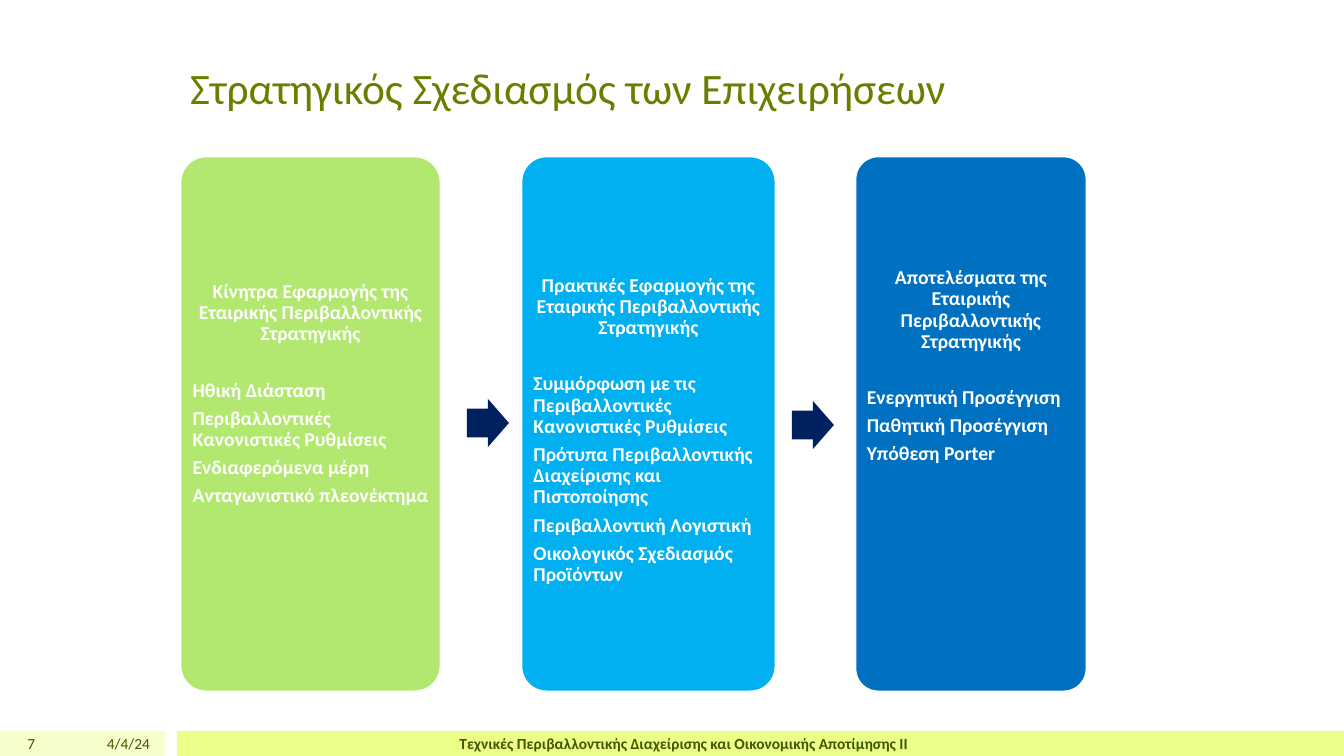
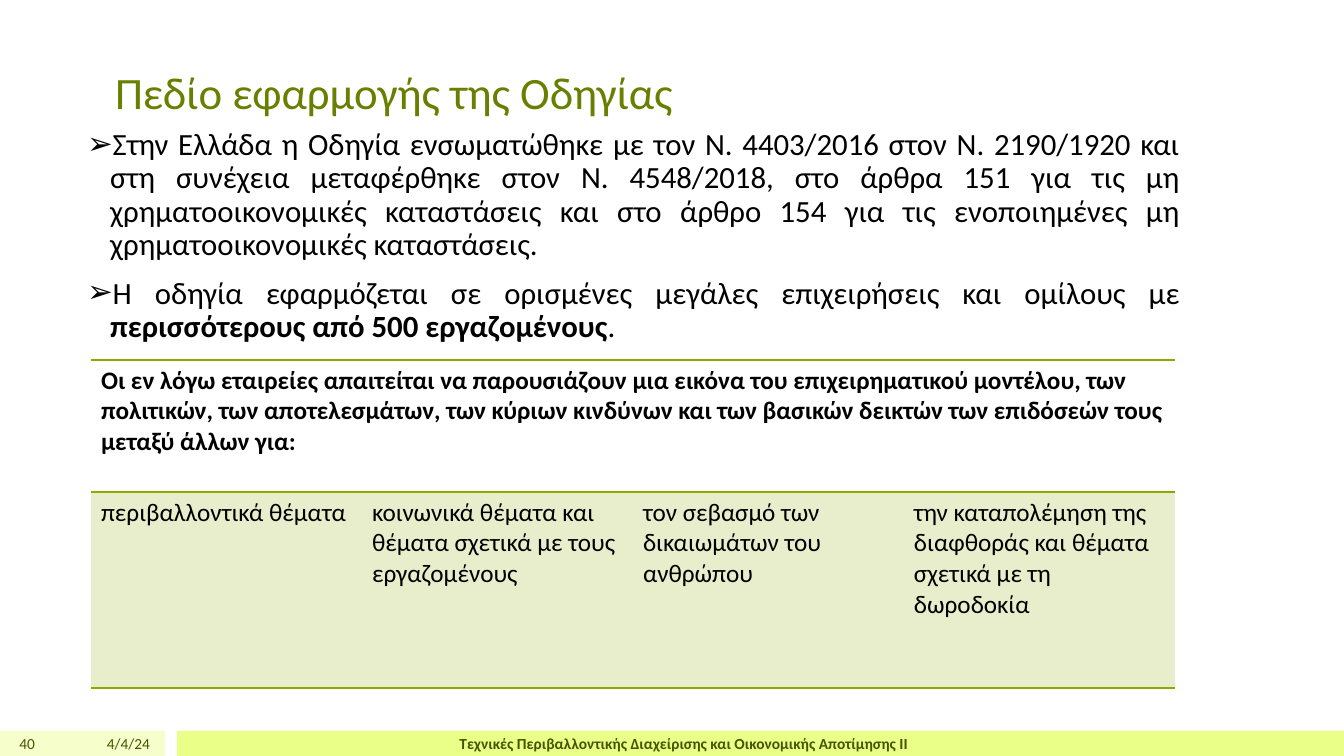
from pptx import Presentation
from pptx.dml.color import RGBColor
from pptx.enum.shapes import MSO_SHAPE
from pptx.enum.text import MSO_ANCHOR, MSO_AUTO_SIZE, PP_ALIGN
from pptx.oxml.ns import qn
from pptx.util import Emu, Pt
from lxml import etree

SLIDE_WIDTH, SLIDE_HEIGHT = 1344, 756
EMU_PER_PX = 12192000 / SLIDE_WIDTH

FONT = "Calibri"
BLACK = RGBColor(0x00, 0x00, 0x00)
WHITE = RGBColor(0xFF, 0xFF, 0xFF)
OLIVE = RGBColor(0x68, 0x80, 0x00)
DARK_OLIVE = RGBColor(0x45, 0x55, 0x00)
PALE_LIME = RGBColor(0xF6, 0xFF, 0xCC)
LIME = RGBColor(0xE9, 0xFF, 0x88)
TABLE_LINE = RGBColor(0x8B, 0xAA, 0x00)
TABLE_FILL = RGBColor(0xE8, 0xEE, 0xCC)
GREEN = RGBColor(0xB3, 0xE8, 0x70)
SKY = RGBColor(0x00, 0xB0, 0xF0)
BLUE = RGBColor(0x00, 0x70, 0xC0)
NAVY = RGBColor(0x00, 0x20, 0x60)

TITLE_ONLY, TITLE_AND_BODY = 5, 1
DATE = "4/4/24"
COURSE = "Τεχνικές Περιβαλλοντικής Διαχείρισης και Οικονομικής Αποτίμησης ΙΙ"
BAND_TOP, BAND_HEIGHT = 731, 25
CARD_TOP, CARD_HEIGHT = 156, 536


def px(length):
    return Emu(round(length * EMU_PER_PX))


def set_values(target, values):
    for name, value in values.items():
        setattr(target, name, value)


class SlideBuilder:
    """Holds the deck, its style and the slide being filled."""

    def __init__(self):
        self.deck = Presentation()
        self.deck.slide_width = px(SLIDE_WIDTH)
        self.deck.slide_height = px(SLIDE_HEIGHT)
        self.page = None

    def new_slide(self, layout, number):
        self.page = self.deck.slides.add_slide(self.deck.slide_layouts[layout])
        self.shape(MSO_SHAPE.RECTANGLE, (0, BAND_TOP, 165, BAND_HEIGHT), PALE_LIME)
        self.shape(MSO_SHAPE.RECTANGLE, (177, BAND_TOP, 1167, BAND_HEIGHT), LIME)
        self.footer(number, 0, 45, PP_ALIGN.RIGHT)
        self.footer(DATE, 50, 110, PP_ALIGN.RIGHT)
        self.footer(COURSE, 180, 1008, PP_ALIGN.CENTER, bold=True)

    def place(self, box, area):
        set_values(box, dict(zip(("left", "top", "width", "height"), map(px, area))))

    def add_text(self, para, text, size, color, bold=False, **layout):
        """Fill a paragraph with a text, or with (text, bold) spans."""
        set_values(para, layout)
        spans = [(text, bold)] if isinstance(text, str) else text
        for content, is_bold in spans:
            span = para.add_run()
            span.text = content
            set_values(span.font, {"name": FONT, "size": Pt(size), "bold": is_bold})
            span.font.color.rgb = color

    def paragraphs(self, frame, count):
        return [frame.paragraphs[0]] + [frame.add_paragraph() for _ in range(count - 1)]

    def footer(self, text, left, width, alignment, bold=False):
        box = self.page.shapes.add_textbox(
            *map(px, (left, BAND_TOP, width, BAND_HEIGHT)))
        set_values(box.text_frame, {
            "word_wrap": True, "vertical_anchor": MSO_ANCHOR.MIDDLE,
            "margin_top": 0, "margin_bottom": 0})
        self.add_text(box.text_frame.paragraphs[0], text, 11, DARK_OLIVE, bold,
                      alignment=alignment)

    def title(self, text, area, size):
        box = self.page.shapes.title
        self.place(box, area)
        set_values(box.text_frame, {
            "word_wrap": True, "auto_size": MSO_AUTO_SIZE.NONE,
            "vertical_anchor": MSO_ANCHOR.BOTTOM})
        self.add_text(box.text_frame.paragraphs[0], text, size, OLIVE,
                      alignment=PP_ALIGN.LEFT, line_spacing=0.9)

    def bullets(self, items, area):
        box = self.page.placeholders[1]
        self.place(box, area)
        frame = box.text_frame
        set_values(frame, {"word_wrap": True, "auto_size": MSO_AUTO_SIZE.NONE})
        for para, item in zip(self.paragraphs(frame, len(items)), items):
            self.add_text(para, item, 22, BLACK, alignment=PP_ALIGN.JUSTIFY,
                          line_spacing=0.9, space_before=Pt(11))
            properties = para._p.get_or_add_pPr()
            properties.set("marL", str(px(23)))
            properties.set("indent", str(-px(23)))
            etree.SubElement(properties, qn("a:buChar")).set("char", "➢")

    def shape(self, kind, area, fill, adjustments=()):
        shape = self.page.shapes.add_shape(kind, *map(px, area))
        shape.shadow.inherit = False
        shape.fill.solid()
        shape.fill.fore_color.rgb = fill
        shape.line.fill.background()
        for index, value in enumerate(adjustments):
            shape.adjustments[index] = value
        return shape

    def card(self, left, width, fill, text_top, heading, items):
        card = self.shape(MSO_SHAPE.ROUNDED_RECTANGLE,
                          (left, CARD_TOP, width, CARD_HEIGHT), fill, [0.1])
        card.line.color.rgb = WHITE
        card.line.width = Pt(2)
        frame = card.text_frame
        set_values(frame, {
            "word_wrap": True, "vertical_anchor": MSO_ANCHOR.TOP,
            "margin_left": px(5), "margin_right": px(5), "margin_top": px(text_top)})
        first, *rest = self.paragraphs(frame, len(items) + 1)
        self.add_text(first, heading, 14, WHITE, True, alignment=PP_ALIGN.CENTER,
                      line_spacing=0.9, space_after=Pt(25))
        for para, item in zip(rest, items):
            self.add_text(para, item, 14, WHITE, True, alignment=PP_ALIGN.LEFT,
                          line_spacing=0.9, space_after=Pt(5))

    def arrow(self, area):
        self.shape(MSO_SHAPE.RIGHT_ARROW, area, NAVY, [0.6, 0.5])

    def cell_borders(self, cell):
        """Draw the top and bottom borders and hide the side ones."""
        properties = cell._tc.get_or_add_tcPr()
        for side in ("lnL", "lnR", "lnT", "lnB"):
            line = etree.SubElement(properties, qn(f"a:{side}"))
            if side in ("lnL", "lnR"):
                etree.SubElement(line, qn("a:noFill"))
                continue
            line.set("w", str(Pt(1)))
            fill = etree.SubElement(line, qn("a:solidFill"))
            etree.SubElement(fill, qn("a:srgbClr")).set("val", str(TABLE_LINE))

    def table(self, heading, topics, area, row_heights):
        table = self.page.shapes.add_table(2, len(topics), *map(px, area)).table
        set_values(table, {"first_row": False, "horz_banding": False})
        for row, height in zip(table.rows, row_heights):
            row.height = px(height)
        for cell in table.iter_cells():
            self.cell_borders(cell)
            cell.fill.background()
        header = table.cell(0, 0)
        header.merge(table.cell(0, len(topics) - 1))
        self.add_text(header.text_frame.paragraphs[0], heading, 18, BLACK, True)
        for column, topic in enumerate(topics):
            cell = table.cell(1, column)
            cell.fill.solid()
            cell.fill.fore_color.rgb = TABLE_FILL
            self.add_text(cell.text_frame.paragraphs[0], topic, 18, BLACK)


def build_strategy(builder):
    builder.new_slide(TITLE_ONLY, "7")
    builder.title("Στρατηγικός Σχεδιασμός των Επιχειρήσεων", (180, 32, 1033, 87), 31)
    cards = [
        (180, 261, GREEN, 118,
         "Κίνητρα Εφαρμογής της Εταιρικής Περιβαλλοντικής Στρατηγικής",
         ["Ηθική Διάσταση", "Περιβαλλοντικές Κανονιστικές Ρυθμίσεις",
          "Ενδιαφερόμενα μέρη", "Ανταγωνιστικό πλεονέκτημα"]),
        (521, 255, SKY, 112,
         "Πρακτικές Εφαρμογής της Εταιρικής Περιβαλλοντικής Στρατηγικής",
         ["Συμμόρφωση με τις Περιβαλλοντικές Κανονιστικές Ρυθμίσεις",
          "Πρότυπα Περιβαλλοντικής Διαχείρισης και Πιστοποίησης",
          "Περιβαλλοντική Λογιστική", "Οικολογικός Σχεδιασμός Προϊόντων"]),
        (855, 232, BLUE, 105,
         "Αποτελέσματα της Εταιρικής Περιβαλλοντικής Στρατηγικής",
         ["Ενεργητική Προσέγγιση", "Παθητική Προσέγγιση", "Υπόθεση Porter"]),
    ]
    for card in cards:
        builder.card(*card)
    for area in ((467, 399, 42, 48), (792, 401, 42, 48)):
        builder.arrow(area)


def build_directive(builder):
    builder.new_slide(TITLE_AND_BODY, "40")
    builder.title("Πεδίο εφαρμογής της Οδηγίας", (105, 37, 1113, 87), 32)
    builder.bullets([
        "Στην Ελλάδα η Οδηγία ενσωματώθηκε με τον Ν. 4403/2016 στον Ν. 2190/1920 "
        "και στη συνέχεια μεταφέρθηκε στον Ν. 4548/2018, στο άρθρα 151 για τις μη "
        "χρηματοοικονομικές καταστάσεις και στο άρθρο 154 για τις ενοποιημένες μη "
        "χρηματοοικονομικές καταστάσεις.",
        [("Η οδηγία εφαρμόζεται σε ορισμένες μεγάλες επιχειρήσεις και ομίλους με ", False),
         ("περισσότερους από 500 εργαζομένους", True), (".", False)],
    ], (77, 124, 1113, 581))
    builder.table(
        "Οι εν λόγω εταιρείες απαιτείται να παρουσιάζουν μια εικόνα του "
        "επιχειρηματικού μοντέλου, των πολιτικών, των αποτελεσμάτων, των κύριων "
        "κινδύνων και των βασικών δεικτών των επιδόσεών τους μεταξύ άλλων για:",
        ["περιβαλλοντικά θέματα",
         "κοινωνικά θέματα και θέματα σχετικά με τους εργαζομένους",
         "τον σεβασμό των δικαιωμάτων του ανθρώπου",
         "την καταπολέμηση της διαφθοράς και θέματα σχετικά με τη δωροδοκία"],
        (91, 360, 1084, 328), (132, 196))


def main():
    builder = SlideBuilder()
    build_strategy(builder)
    build_directive(builder)
    builder.deck.save("out.pptx")


if __name__ == "__main__":
    main()
